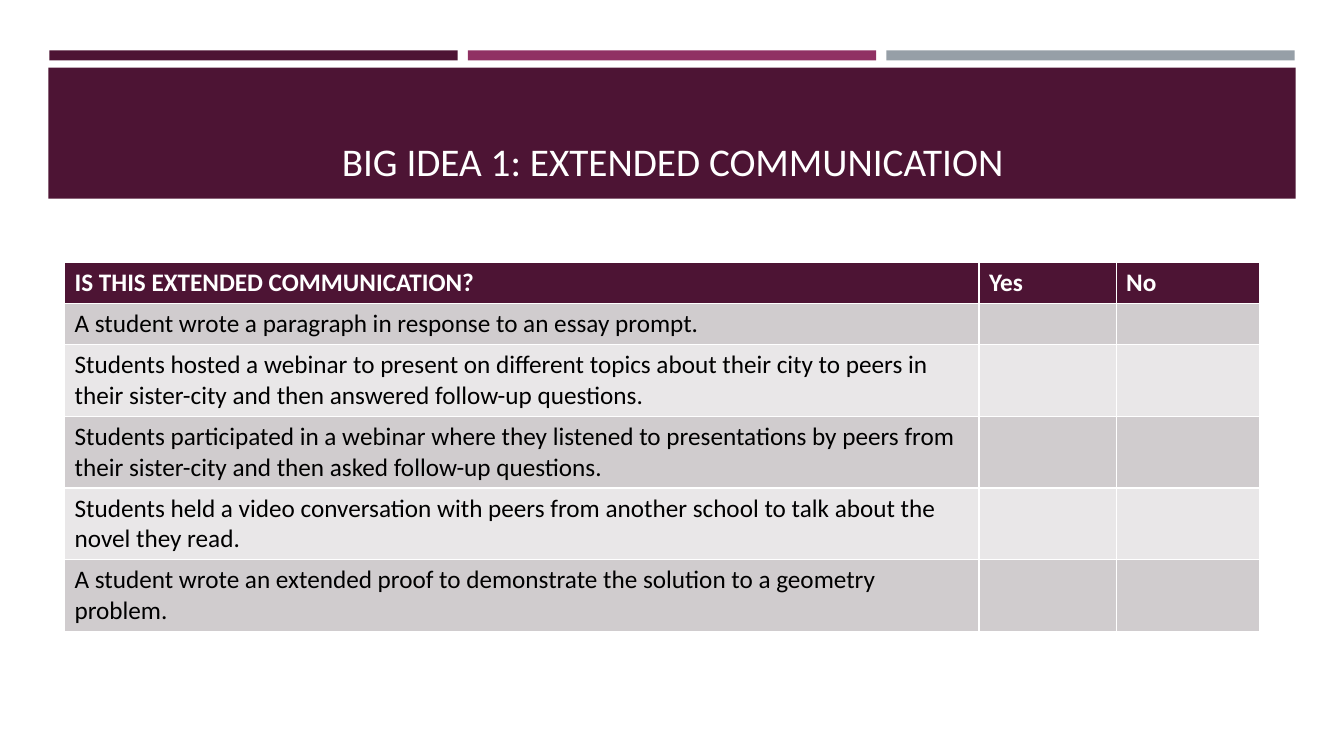
from pptx import Presentation
from pptx.dml.color import RGBColor
from pptx.enum import shapes, text
from pptx.util import Inches, Pt

PLUM = RGBColor(0x4D, 0x14, 0x34)
BERRY = RGBColor(0x90, 0x31, 0x63)
GREY = RGBColor(0x96, 0x9F, 0xA7)
DARK = RGBColor(0xD0, 0xCC, 0xCE)
LIGHT = RGBColor(0xE9, 0xE7, 0xE8)
WHITE = RGBColor(0xFF, 0xFF, 0xFF)
BLACK = RGBColor(0, 0, 0)
FONT = "Calibri"

HEAD = ["IS THIS EXTENDED COMMUNICATION?", "Yes", "No"]
CASES = [
    "A student wrote a paragraph in response to an essay prompt.",
    "Students hosted a webinar to present on different topics about their city "
    "to peers in their sister-city and then answered follow-up questions.",
    "Students participated in a webinar where they listened to presentations "
    "by peers from their sister-city and then asked follow-up questions.",
    "Students held a video conversation with peers from another school to talk "
    "about the novel they read.",
    "A student wrote an extended proof to demonstrate the solution to a "
    "geometry problem.",
]
WIDTHS = [9.07, 1.36, 1.42]
HEIGHTS = [0.41, 0.41] + [0.71] * 4


def style(para, size, color, bold=False):
    for run in para.runs:
        font = run.font
        font.name, font.size, font.bold = FONT, Pt(size), bold
        font.color.rgb = color


def add_bar(slide, left, top, width, height, color):
    bar = slide.shapes.add_shape(
        shapes.MSO_SHAPE.RECTANGLE,
        Inches(left), Inches(top), Inches(width), Inches(height))
    bar.shadow.inherit = False
    bar.fill.solid()
    bar.fill.fore_color.rgb = color
    bar.line.fill.background()


def add_strips(slide, left, top, width, height, gap=0.1):
    colors = [PLUM, BERRY, GREY]
    size = (width - gap * (len(colors) - 1)) / len(colors)
    for i, color in enumerate(colors):
        add_bar(slide, left + i * (size + gap), top, size, height, color)


def add_banner(slide, left, top, width, height, words):
    add_bar(slide, left, top, width, height, PLUM)
    title = slide.shapes.title
    # The title has to lie in front of the band.
    title.element.getparent().append(title.element)
    title.left, title.top = Inches(left + 0.16), Inches(top + 0.1)
    title.width, title.height = Inches(width - 0.31), Inches(height - 0.19)
    frame = title.text_frame
    frame.text = words
    frame.word_wrap = True
    frame.vertical_anchor = text.MSO_ANCHOR.BOTTOM
    para = frame.paragraphs[0]
    para.alignment = text.PP_ALIGN.CENTER
    style(para, 28, WHITE)


def add_quiz(slide, left, top):
    rows = [HEAD] + [[case, "", ""] for case in CASES]
    table = slide.shapes.add_table(
        len(rows), len(HEAD), Inches(left), Inches(top),
        Inches(sum(WIDTHS)), Inches(sum(HEIGHTS))).table
    for col, width in zip(table.columns, WIDTHS):
        col.width = Inches(width)
    for r, words in enumerate(rows):
        table.rows[r].height = Inches(HEIGHTS[r])
        fill = PLUM if r == 0 else DARK if r % 2 else LIGHT
        for c, word in enumerate(words):
            cell = table.cell(r, c)
            cell.fill.solid()
            cell.fill.fore_color.rgb = fill
            cell.text = word
            style(cell.text_frame.paragraphs[0], 18,
                  BLACK if r else WHITE, r == 0)


def main():
    deck = Presentation()
    deck.slide_width, deck.slide_height = Inches(13.33), Inches(7.5)
    slide = deck.slides.add_slide(deck.slide_layouts[5])
    add_strips(slide, 0.49, 0.5, 12.35, 0.1)
    add_banner(slide, 0.48, 0.67, 12.37, 1.3,
               "BIG IDEA 1: EXTENDED COMMUNICATION")
    add_quiz(slide, 0.64, 2.6)
    deck.save("out.pptx")


if __name__ == "__main__":
    main()
